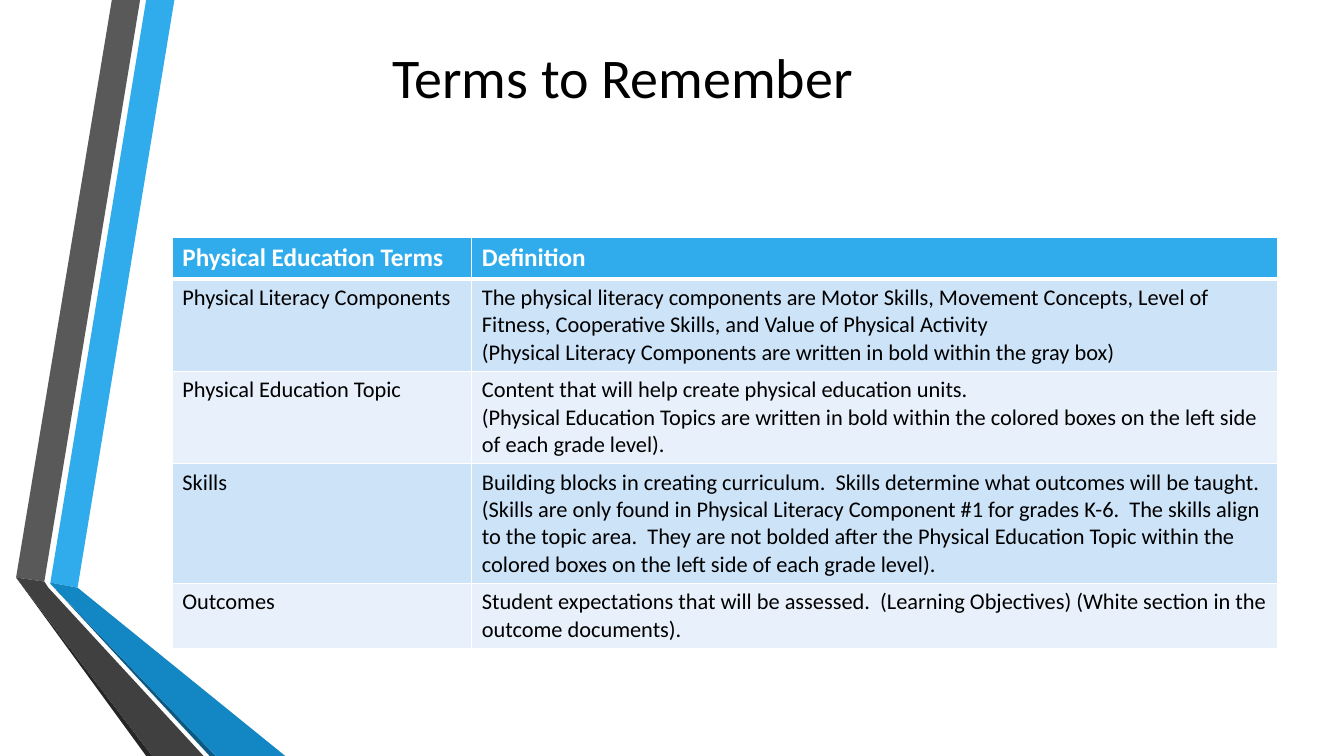
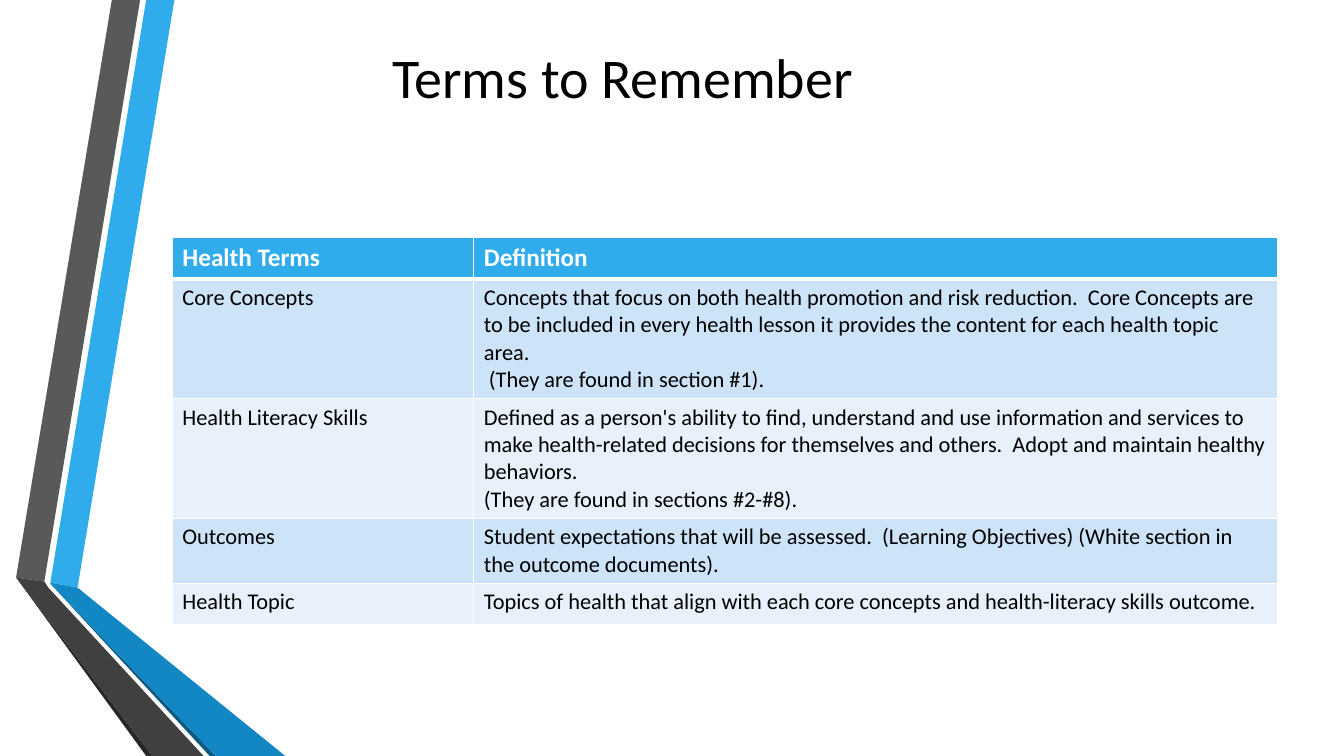
"""Build two glossary slides that share a ribbon, a title style and a table style."""
import pptx
import pptx.util
import pptx.dml.color
import pptx.enum.text
import pptx.oxml
import pptx.oxml.ns

Inches, Pt = pptx.util.Inches, pptx.util.Pt
RGB = pptx.dml.color.RGBColor

BLACK, WHITE = RGB(0, 0, 0), RGB(255, 255, 255)
BLUE, MID_BLUE, DARK_BLUE = RGB(0x30, 0xAC, 0xEC), RGB(0x12, 0x87, 0xC3), RGB(0x0C, 0x5A, 0x82)
GRAY, MID_GRAY, DARK_GRAY = RGB(0x59, 0x59, 0x59), RGB(0x40, 0x40, 0x40), RGB(0x26, 0x26, 0x26)
BAND_FILLS = [RGB(0xCD, 0xE3, 0xF8), RGB(0xE8, 0xF1, 0xFB)]

TITLE_FONT = {"name": "Calibri", "size": Pt(40), "bold": False}
HEAD_FONT = {"name": "Calibri", "size": Pt(18), "bold": True}
BODY_FONT = {"name": "Calibri", "size": Pt(16), "bold": False}

TITLE_BOX = {"left": Inches(1.71), "top": Inches(0.24), "width": Inches(8.93), "height": Inches(1.02)}
TABLE_LEFT, TABLE_TOP, TABLE_WIDTH, ROW_HEIGHT = 1.71, 2.36, 10.96, 0.41

RIBBONS = [
    (BLUE, [(0.5, 5.78), (0.77, 5.83), (1.73, 0), (1.45, 0)]),
    (GRAY, [(1.39, 0), (1.11, 0), (0.16, 5.73), (0.44, 5.77)]),
    (DARK_GRAY, [(0.16, 5.73), (1.45, 7.5), (1.51, 7.5)]),
    (DARK_BLUE, [(0.5, 5.79), (2.08, 7.5), (2.14, 7.5)]),
    (MID_BLUE, [(0.5, 5.79), (2.14, 7.5), (2.83, 7.5), (0.77, 5.83), (0.5, 5.78)]),
    (MID_GRAY, [(2.02, 7.5), (0.48, 5.83), (0.44, 5.77), (0.16, 5.73), (1.51, 7.5)]),
]

OUTCOMES = (
    "Outcomes",
    ["Student expectations that will be assessed.  (Learning Objectives) "
     "(White section in the outcome documents)."],
)

SLIDES = [
    {
        "title": "Terms to Remember",
        "term_width": 2.97,
        "rows": [
            ("Physical Education Terms", ["Definition"]),
            ("Physical Literacy Components", [
                "The physical literacy components are Motor Skills, Movement Concepts, "
                "Level of Fitness, Cooperative Skills, and Value of Physical Activity",
                "(Physical Literacy Components are written in bold within the gray box)"]),
            ("Physical Education Topic", [
                "Content that will help create physical education units.",
                "(Physical Education Topics are written in bold within the colored boxes "
                "on the left side of each grade level)."]),
            ("Skills", [
                "Building blocks in creating curriculum.  Skills determine what outcomes "
                "will be taught.",
                "(Skills are only found in Physical Literacy Component #1 for grades K-6.  "
                "The skills align to the topic area.  They are not bolded after the Physical "
                "Education Topic within the colored boxes on the left side of each grade level)."]),
            OUTCOMES,
        ],
    },
    {
        "title": "Terms to Remember",
        "term_width": 2.99,
        "rows": [
            ("Health Terms", ["Definition"]),
            ("Core Concepts", [
                "Concepts that focus on both health promotion and risk reduction.  Core "
                "Concepts are to be included in every health lesson it provides the content "
                "for each health topic area.",
                " (They are found in section #1)."]),
            ("Health Literacy Skills", [
                "Defined as a person's ability to find, understand and use information and "
                "services to make health-related decisions for themselves and others.  Adopt "
                "and maintain healthy behaviors.",
                "(They are found in sections #2-#8)."]),
            OUTCOMES,
            ("Health Topic", [
                "Topics of health that align with each core concepts and health-literacy "
                "skills outcome."]),
        ],
    },
]


def set_attributes(target, values):
    for name, value in values.items():
        setattr(target, name, value)


def format_text(tf, font, color):
    for p in tf.paragraphs:
        set_attributes(p.font, font)
        p.font.color.rgb = color


def add_ribbons(layout, s):
    """Draw the ribbon pieces on a slide, then move them behind the layout's placeholders."""
    for i, (color, points) in enumerate(RIBBONS):
        corners = [(Inches(x), Inches(y)) for x, y in points]
        builder = s.shapes.build_freeform(*corners[0])
        builder.add_line_segments(corners[1:], close=True)
        sp = builder.convert_to_shape()
        sp.name = f"Ribbon {i + 1}"
        sp.shadow.inherit = False
        sp.fill.solid()
        sp.fill.fore_color.rgb = color
        sp.line.fill.background()
        sp.element.nvSpPr.cNvPr.set("id", str(20 + i))
        layout.shapes.element.insert(2 + i, sp.element)


def set_borders(cell, bottom_width):
    tcPr = cell._tc.get_or_add_tcPr()
    for side, width in (("L", 1), ("R", 1), ("T", 1), ("B", bottom_width)):
        tcPr.append(pptx.oxml.parse_xml(
            f'<a:ln{side} {pptx.oxml.ns.nsdecls("a")} w="{Pt(width)}"><a:solidFill>'
            f'<a:srgbClr val="{WHITE}"/></a:solidFill></a:ln{side}>'))


def add_title(s, text):
    title = s.shapes.title
    set_attributes(title, TITLE_BOX)
    tf = title.text_frame
    tf.text = text
    tf.vertical_anchor = pptx.enum.text.MSO_ANCHOR.MIDDLE
    tf.paragraphs[0].alignment = pptx.enum.text.PP_ALIGN.CENTER
    format_text(tf, TITLE_FONT, BLACK)


def add_terms(s, rows, term_width):
    table = s.shapes.add_table(
        len(rows), 2, Inches(TABLE_LEFT), Inches(TABLE_TOP),
        Inches(TABLE_WIDTH), Inches(ROW_HEIGHT * len(rows))).table
    table.columns[0].width = Inches(term_width)
    table.columns[1].width = Inches(TABLE_WIDTH - term_width)
    for i, (term, definition) in enumerate(rows):
        head = i == 0
        table.rows[i].height = Inches(ROW_HEIGHT)
        for cell, text in zip(table.rows[i].cells, (term, "\n".join(definition))):
            cell.text = text
            format_text(cell.text_frame, HEAD_FONT if head else BODY_FONT, WHITE if head else BLACK)
            set_borders(cell, 3 if head else 1)
            cell.fill.solid()
            cell.fill.fore_color.rgb = BLUE if head else BAND_FILLS[(i - 1) % 2]


def main():
    prs = pptx.Presentation()
    prs.slide_width, prs.slide_height = Inches(13.33), Inches(7.5)
    layout = prs.slide_layouts.get_by_name("Title Only")
    for content in SLIDES:
        s = prs.slides.add_slide(layout)
        add_title(s, content["title"])
        add_terms(s, content["rows"], content["term_width"])
    add_ribbons(layout, prs.slides[0])
    prs.save("out.pptx")


if __name__ == "__main__":
    main()
